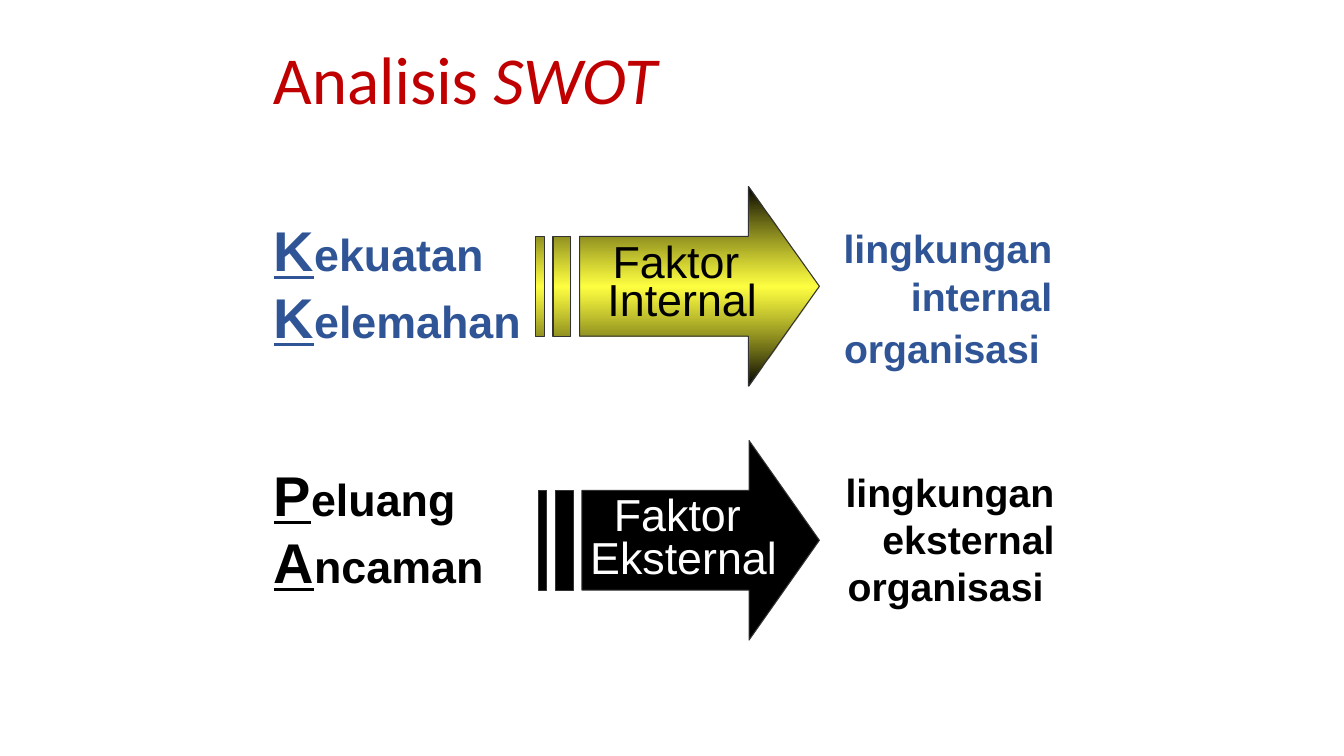
from dataclasses import dataclass
from typing import Any

from pptx import Presentation
from pptx import util as u
from pptx.dml import color
from pptx.enum import text
from pptx.oxml import parse_xml
from pptx.oxml import ns

COLORS = {
    "title": "C00000",
    "blue": "2F5597",
    "black": "000000",
    "white": "FFFFFF",
    "yellow": "FFFF00",
    "outline": "333333",
}
ARROW_HEIGHT = 5.03
LABEL_STEP = 1.68


@dataclass
class Run:
    content: str
    size: float
    color: str
    format: dict[str, Any]


@dataclass
class Factor:
    name: str
    labels: list[str]
    label_top: float
    arrow: tuple[float, float, float]  # left, top, width
    glossy: bool
    name_color: str
    line_spacing: float
    color: str
    environment: list[tuple[str, float]]
    environment_box: tuple[float, float, float, float]


FACTORS = [
    Factor("Internal", ["Kekuatan", "Kelemahan"], 5.31, (13.49, 4.7, 7.16), True,
           "black", 0.7, "blue",
           [("lingkungan internal organisasi", 28), (" ", 32)],
           (19.43, 5.54, 7.34, 3.99)),
    Factor("Eksternal", ["Peluang", "Ancaman"], 11.48, (13.56, 11.1, 7.09), False,
           "white", 0.8, "black",
           [("lingkungan eksternal organisasi ", 28)],
           (19.66, 11.68, 7.16, 3.81)),
]


def rgb(name: str) -> color.RGBColor:
    return color.RGBColor.from_string(COLORS[name])


def write_runs(paragraph: Any, runs: list[Run]) -> None:
    for item in runs:
        run = paragraph.add_run()
        run.text = item.content
        run.font.color.rgb = rgb(item.color)
        values = {"name": "Arial", "size": u.Pt(item.size), **item.format}
        for name, value in values.items():
            setattr(run.font, name, value)


def add_text(slide: Any, box: tuple[float, float, float, float], runs: list[Run],
             frame_format: dict[str, Any], paragraph_format: dict[str, Any]) -> None:
    frame = slide.shapes.add_textbox(*(u.Cm(value) for value in box)).text_frame
    for name, value in {"word_wrap": True, **frame_format}.items():
        setattr(frame, name, value)
    paragraph = frame.paragraphs[0]
    for name, value in paragraph_format.items():
        setattr(paragraph, name, value)
    write_runs(paragraph, runs)


def fill_glossy(shape: Any) -> None:
    """Vertical gradient with a translucent yellow band in the middle."""
    gradient = parse_xml(
        f'<a:gradFill {ns.nsdecls("a")} rotWithShape="1"><a:gsLst>'
        f'<a:gs pos="0"><a:srgbClr val="{COLORS["black"]}"/></a:gs>'
        f'<a:gs pos="50000"><a:srgbClr val="{COLORS["yellow"]}">'
        f'<a:alpha val="74000"/></a:srgbClr></a:gs>'
        f'<a:gs pos="100000"><a:srgbClr val="{COLORS["black"]}"/></a:gs>'
        f'</a:gsLst><a:lin ang="5400000" scaled="1"/></a:gradFill>')
    properties = shape._element.spPr
    properties.replace(properties.find(ns.qn("a:solidFill")), gradient)


def add_arrow(slide: Any, factor: Factor) -> None:
    left, top, width = factor.arrow

    def point(x: float, y: float) -> tuple[int, int]:
        """Place x in 32nds of the width and y in quarters of the height."""
        return (u.Cm(left + width * x / 32), u.Cm(top + ARROW_HEIGHT * y / 4))

    # Arrow head with shaft, then the two stripes of its tail
    head = [(24, 0), (24, 1), (5, 1), (5, 3), (24, 3), (24, 4), (32, 2)]
    stripes = [[(start, 1), (start, 3), (end, 3), (end, 1)]
               for start, end in ((2, 4), (0, 1))]
    builder = slide.shapes.build_freeform(*point(*head[0]))
    builder.add_line_segments([point(*corner) for corner in head[1:]], close=True)
    for stripe in stripes:
        builder.move_to(*point(*stripe[0]))
        builder.add_line_segments([point(*corner) for corner in stripe[1:]], close=True)
    shape = builder.convert_to_shape()
    shape.shadow.inherit = False
    shape.line.color.rgb = rgb("outline")
    shape.line.width = u.Pt(0.75)
    shape.fill.solid()
    shape.fill.fore_color.rgb = rgb("black")
    if factor.glossy:
        fill_glossy(shape)

    # Name of the factor
    frame = shape.text_frame
    frame_format = {"word_wrap": False, "vertical_anchor": text.MSO_ANCHOR.MIDDLE,
                    "margin_left": u.Cm(0.5), "margin_right": u.Cm(0.25)}
    for name, value in frame_format.items():
        setattr(frame, name, value)
    for index, content in enumerate(("Faktor ", factor.name)):
        paragraph = frame.add_paragraph() if index else frame.paragraphs[0]
        paragraph.alignment = text.PP_ALIGN.CENTER
        paragraph.line_spacing = factor.line_spacing
        write_runs(paragraph, [Run(content, 32, factor.name_color, {})])


def add_factor(slide: Any, factor: Factor) -> None:
    add_arrow(slide, factor)
    grow = {"auto_size": text.MSO_AUTO_SIZE.SHAPE_TO_FIT_TEXT}
    bold = {"bold": True}

    # Labels with an underlined initial
    for index, label in enumerate(factor.labels):
        runs = [Run(label[0], 40, factor.color, {**bold, "underline": True}),
                Run(label[1:], 32, factor.color, bold)]
        box = (6.65, factor.label_top + index * LABEL_STEP, 7.7, 1.96)
        add_text(slide, box, runs, grow, {})

    # Environment on the right
    runs = [Run(content, size, factor.color, bold)
            for content, size in factor.environment]
    add_text(slide, factor.environment_box, runs, grow,
             {"alignment": text.PP_ALIGN.RIGHT})


def main() -> None:
    presentation = Presentation()
    presentation.slide_width = u.Cm(33.87)
    presentation.slide_height = u.Cm(19.05)
    slide = presentation.slides.add_slide(presentation.slide_layouts[6])

    # Title
    title = [Run("Analisis ", 48, "title", {"name": "Calibri"}),
             Run("SWOT", 48, "title", {"name": "Calibri", "italic": True})]
    add_text(slide, (6.63, 0.74, 19.61, 2.69), title,
             {"vertical_anchor": text.MSO_ANCHOR.MIDDLE}, {"line_spacing": 0.9})

    # Internal and external factors
    for factor in FACTORS:
        add_factor(slide, factor)
    presentation.save("out.pptx")


if __name__ == "__main__":
    main()
